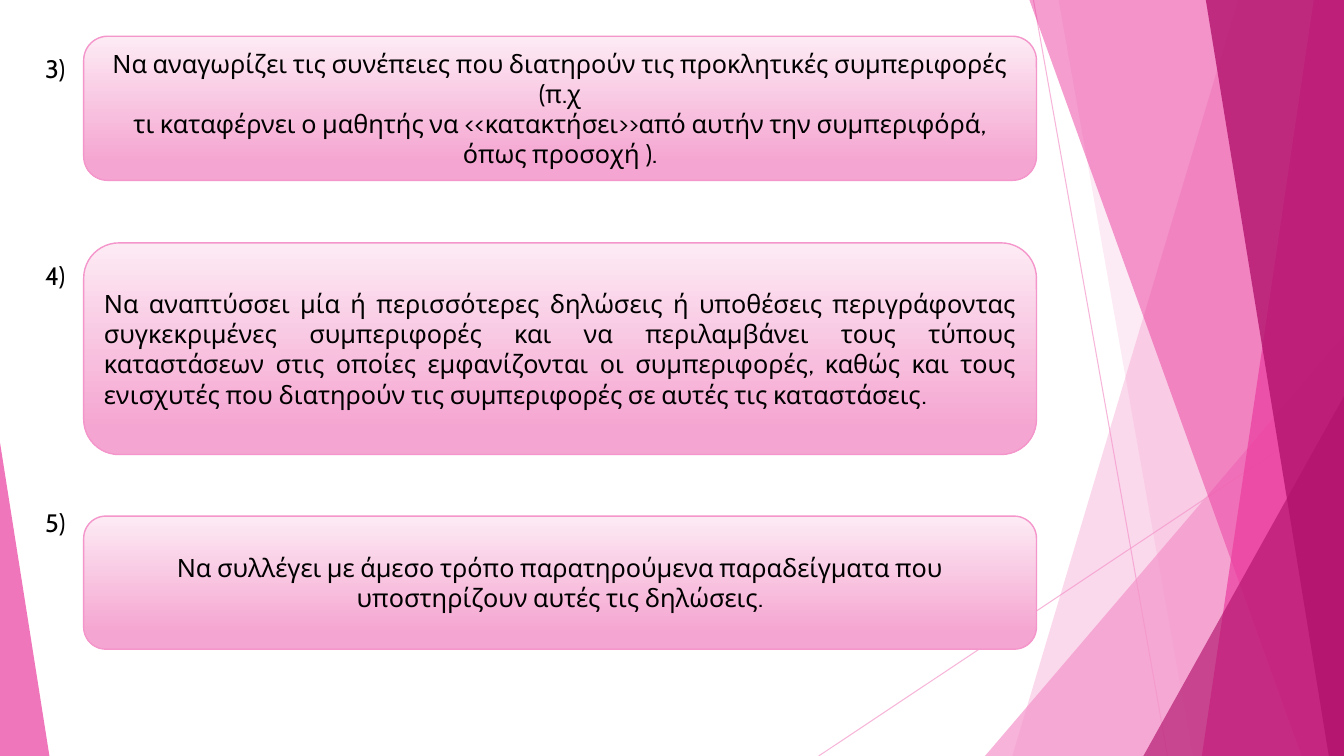
"""Build a slide with three numbered statements beside a pink facet decoration."""
from dataclasses import dataclass

import lxml.etree
import pptx
import pptx.dml.color
import pptx.enum.shapes
import pptx.enum.text
import pptx.oxml.ns
import pptx.util

Inches = pptx.util.Inches
Align = pptx.enum.text.PP_ALIGN
WIDTH, HEIGHT = 13.33, 7.5
FONT, TEXT_SIZE = "Cabin", 18
CARD_LEFT, CARD_WIDTH = 0.83, 9.45
COLORS = {
    "text": "000000",
    "light": "F496CB",
    "middle": "EB3D9F",
    "dark": "B2136D",
    "card_top": "FDEBF4",
    "card_foot": "F5A5D1",
}


@dataclass(frozen=True)
class Ray:
    start: tuple[float, float]
    end: tuple[float, float]


@dataclass(frozen=True)
class Facet:
    top_x: float
    foot_x: float
    color: str
    opacity: int


@dataclass(frozen=True)
class Corner:
    left: float
    top: float
    width: float
    apex: float
    color: str
    opacity: int


@dataclass(frozen=True)
class Statement:
    number: str
    number_top: float
    number_width: float
    top: float
    height: float
    align: Align
    lines: tuple[str, ...]


DECORATION = (
    Ray((10.25, 0), (11.58, HEIGHT)),
    Ray((WIDTH, 4.03), (8.12, HEIGHT)),
    Facet(12.28, 10.04, "light", 36),
    Facet(10.5, 11.83, "light", 20),
    Corner(9.77, 3.33, 3.56, 1, "light", 72),
    Facet(10.21, 12.91, "middle", 50),
    Facet(13.03, 11.92, "middle", 70),
    Facet(11.96, 13.18, "dark", 80),
    Corner(11.34, 3.93, 1.99, 1, "dark", 66),
    Corner(0, 4.39, 0.49, 0, "middle", 70),
)

STATEMENTS = (
    Statement("3)", 0.48, 0.48, 0.36, 1.43, Align.CENTER, (
        "Να αναγωρίζει τις συνέπειες που διατηρούν τις προκλητικές συμπεριφορές (π.χ",
        "τι καταφέρνει ο μαθητής να <<κατακτήσει>>από αυτήν την συμπεριφόρά, "
        "όπως προσοχή ).",
    )),
    Statement("4)", 2.53, 0.57, 2.41, 2.1, Align.JUSTIFY, (
        "Να αναπτύσσει μία ή περισσότερες δηλώσεις ή υποθέσεις περιγράφοντας "
        "συγκεκριμένες συμπεριφορές και να περιλαμβάνει τους τύπους καταστάσεων "
        "στις οποίες εμφανίζονται οι συμπεριφορές, καθώς και τους ενισχυτές που "
        "διατηρούν τις συμπεριφορές σε αυτές τις καταστάσεις.",
    )),
    Statement("5)", 4.98, 0.72, 5.12, 1.32, Align.CENTER, (
        "Να συλλέγει με άμεσο τρόπο παρατηρούμενα παραδείγματα που υποστηρίζουν "
        "αυτές τις δηλώσεις.",
    )),
)


def rgb(name: str) -> pptx.dml.color.RGBColor:
    return pptx.dml.color.RGBColor.from_string(COLORS[name])


def set_opacity(element, percent: int) -> None:
    color = next(element.iter(pptx.oxml.ns.qn("a:srgbClr")))
    alpha = lxml.etree.SubElement(color, pptx.oxml.ns.qn("a:alpha"))
    alpha.set("val", str(percent * 1000))


def paint(shape, color: str, opacity: int) -> None:
    shape.shadow.inherit = False
    shape.fill.solid()
    shape.fill.fore_color.rgb = rgb(color)
    set_opacity(shape.fill._xPr, opacity)
    shape.line.fill.background()


def draw_ray(page, ray: Ray) -> None:
    points = [Inches(value) for value in ray.start + ray.end]
    line = page.shapes.add_connector(pptx.enum.shapes.MSO_CONNECTOR.STRAIGHT, *points)
    line.line.color.rgb = rgb("light")
    line.line.width = pptx.util.Pt(0.75)
    properties = line._element.spPr
    set_opacity(properties, 70)
    lxml.etree.SubElement(properties, pptx.oxml.ns.qn("a:effectLst"))


def draw_facet(page, facet: Facet) -> None:
    corners = ((WIDTH, 0), (WIDTH, HEIGHT), (facet.foot_x, HEIGHT))
    builder = page.shapes.build_freeform(Inches(facet.top_x), 0)
    builder.add_line_segments([(Inches(x), Inches(y)) for x, y in corners])
    paint(builder.convert_to_shape(), facet.color, facet.opacity)


def draw_corner(page, corner: Corner) -> None:
    shape = page.shapes.add_shape(
        pptx.enum.shapes.MSO_SHAPE.ISOSCELES_TRIANGLE,
        Inches(corner.left), Inches(corner.top),
        Inches(corner.width), Inches(HEIGHT - corner.top),
    )
    shape.adjustments[0] = corner.apex
    paint(shape, corner.color, corner.opacity)


def write(shape, lines: tuple[str, ...], align: Align) -> None:
    frame = shape.text_frame
    frame.word_wrap = True
    for index, line in enumerate(lines):
        para = frame.add_paragraph() if index else frame.paragraphs[0]
        para.alignment = align
        span = para.add_run()
        span.text = line
        span.font.name = FONT
        span.font.size = pptx.util.Pt(TEXT_SIZE)
        span.font.color.rgb = rgb("text")


def draw_statement(page, statement: Statement) -> None:
    card = page.shapes.add_shape(
        pptx.enum.shapes.MSO_SHAPE.ROUNDED_RECTANGLE,
        Inches(CARD_LEFT), Inches(statement.top),
        Inches(CARD_WIDTH), Inches(statement.height),
    )
    card.shadow.inherit = False
    card.fill.gradient()
    card.fill.gradient_angle = 270
    stops = ((0, "card_top"), (0.88, "card_foot"))
    for stop, (position, color) in zip(card.fill.gradient_stops, stops):
        stop.position = position
        stop.color.rgb = rgb(color)
    card.line.color.rgb = rgb("light")
    card.line.width = pptx.util.Pt(1)
    card.text_frame.vertical_anchor = pptx.enum.text.MSO_ANCHOR.MIDDLE
    write(card, statement.lines, statement.align)

    box = page.shapes.add_textbox(
        Inches(0.35), Inches(statement.number_top),
        Inches(statement.number_width), Inches(0.4),
    )
    box.text_frame.auto_size = pptx.enum.text.MSO_AUTO_SIZE.SHAPE_TO_FIT_TEXT
    write(box, (statement.number,), Align.LEFT)


def main() -> None:
    deck = pptx.Presentation()
    deck.slide_width, deck.slide_height = Inches(WIDTH), Inches(HEIGHT)
    page = deck.slides.add_slide(deck.slide_layouts[6])
    painters = {Ray: draw_ray, Facet: draw_facet, Corner: draw_corner}
    for part in DECORATION:
        painters[type(part)](page, part)
    for statement in STATEMENTS:
        draw_statement(page, statement)
    deck.save("out.pptx")


if __name__ == "__main__":
    main()
